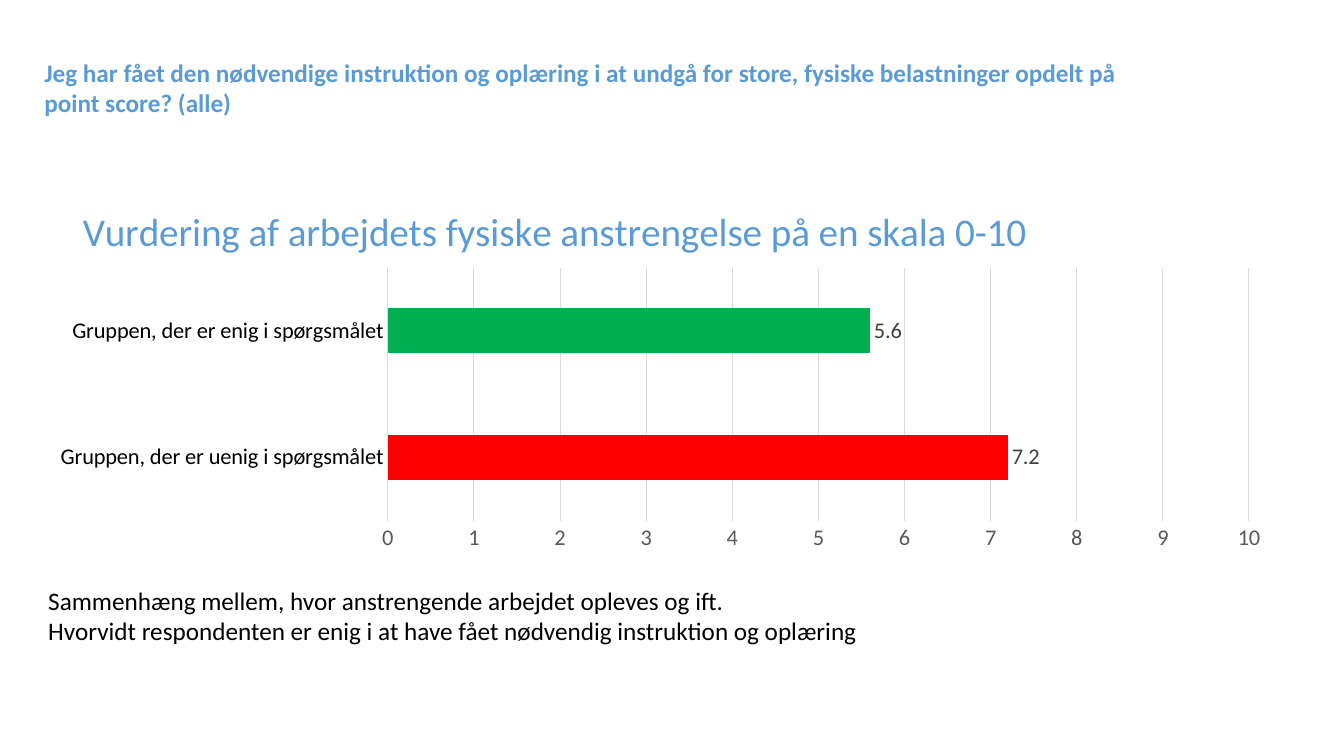
import pptx
import pptx.chart.data
import pptx.dml.color
import pptx.enum.chart
import pptx.enum.text
import pptx.oxml
import pptx.oxml.ns
import pptx.util

# Content
TITLE = ("Jeg har fået den nødvendige instruktion og oplæring i at undgå for store, "
         "fysiske belastninger opdelt på point score? (alle)")
CHART_TITLE = "Vurdering af arbejdets fysiske anstrengelse på en skala 0-10"
NOTES = ["Sammenhæng mellem, hvor anstrengende arbejdet opleves og ift.",
         "Hvorvidt respondenten er enig i at have fået nødvendig instruktion og oplæring"]

RGB = pptx.dml.color.RGBColor
BLUE, RED, GREEN = RGB(0x5B, 0x9B, 0xD5), RGB(0xFF, 0, 0), RGB(0, 0xB0, 0x50)
BLACK, AXIS_GREY = RGB(0, 0, 0), RGB(0x59, 0x59, 0x59)
LABEL_GREY, GRID_GREY = RGB(0x40, 0x40, 0x40), RGB(0xD9, 0xD9, 0xD9)
GROUPS = [("Gruppen, der er uenig i spørgsmålet", 7.2, RED),
          ("Gruppen, der er enig i spørgsmålet", 5.6, GREEN)]

# Places: left, top, width, height in inches; chart parts as shares of the chart
TITLE_BOX = (0.31, 0.41, 11.2, 0.91)
CHART_BOX = (0.38, 1.74, 12.38, 3.81)
NOTES_BOX = (0.38, 5.76, 8.32, 0.71)
CHART_TITLE_AT = {"x": 0.03, "y": 0.06}
PLOT_AT = {"x": 0.28, "y": 0.24, "w": 0.69, "h": 0.66}


def inches(box):
    return [pptx.util.Inches(v) for v in box]


def style(font, size, color, bold=False):
    values = {"name": "Calibri", "size": pptx.util.Pt(size), "bold": bold}
    for key, value in values.items():
        setattr(font, key, value)
    font.color.rgb = color


def draw_line(line):
    line.color.rgb = GRID_GREY
    line.width = pptx.util.Pt(0.75)


def manual_layout(shares, inner=False):
    target = '<c:layoutTarget val="inner"/>' if inner else ""
    modes = "".join(f'<c:{k}Mode val="edge"/>' for k in "xy")
    values = "".join(f'<c:{k} val="{v}"/>' for k, v in shares.items())
    return pptx.oxml.parse_xml(
        f'<c:layout {pptx.oxml.ns.nsdecls("c")}><c:manualLayout>'
        f"{target}{modes}{values}</c:manualLayout></c:layout>")


def replace_layout(parent, layout, index):
    for old in parent.findall(pptx.oxml.ns.qn("c:layout")):
        parent.remove(old)
    parent.insert(index, layout)


prs = pptx.Presentation()
prs.slide_width, prs.slide_height = inches((13.33, 7.5))
s = prs.slides.add_slide(prs.slide_layouts[5])

# Slide title
title = s.shapes.title
title.left, title.top, title.width, title.height = inches(TITLE_BOX)
tf = title.text_frame
tf.text = TITLE
tf.auto_size = pptx.enum.text.MSO_AUTO_SIZE.NONE
tf.vertical_anchor = pptx.enum.text.MSO_ANCHOR.MIDDLE
tf.margin_left = tf.margin_right = pptx.util.Inches(0.13)
tf.margin_top = tf.margin_bottom = pptx.util.Inches(0.07)
p = tf.paragraphs[0]
p.alignment = pptx.enum.text.PP_ALIGN.LEFT
style(p.runs[0].font, 18, BLUE, True)

# Bar chart
data = pptx.chart.data.CategoryChartData(number_format="General")
data.categories = [name for name, _, _ in GROUPS]
data.add_series("Series 1", [score for _, score, _ in GROUPS])
chart = s.shapes.add_chart(pptx.enum.chart.XL_CHART_TYPE.BAR_CLUSTERED,
                           *inches(CHART_BOX), data).chart
style(chart.font, 10, BLACK)
chart.has_legend = False
chart.chart_title.text_frame.text = CHART_TITLE
style(chart.chart_title.text_frame.paragraphs[0].runs[0].font, 28, BLUE)
title_xml = chart.chart_title.format.line and chart.chart_title._element
replace_layout(title_xml, manual_layout(CHART_TITLE_AT), 1)
plot_xml = chart.plots[0]._element.getparent()
replace_layout(plot_xml, manual_layout(PLOT_AT, inner=True), 0)

# Axes
for axis, color in ((chart.category_axis, BLACK), (chart.value_axis, AXIS_GREY)):
    axis.major_tick_mark = axis.minor_tick_mark = pptx.enum.chart.XL_TICK_MARK.NONE
    style(axis.tick_labels.font, 16, color)
draw_line(chart.category_axis.format.line)
scale = chart.value_axis
for key, value in {"minimum_scale": 0, "maximum_scale": 10, "major_unit": 1}.items():
    setattr(scale, key, value)
scale.format.line.fill.background()
draw_line(scale.major_gridlines.format.line)

# Bars and their values
plot = chart.plots[0]
plot.gap_width = 182
plot.vary_by_categories = False
bars = plot.series[0]
bars.format.fill.solid()
bars.format.fill.fore_color.rgb = BLUE
for i, (_, _, color) in enumerate(GROUPS):
    fill = bars.points[i].format.fill
    fill.solid()
    fill.fore_color.rgb = color
labels = bars.data_labels
labels.show_value = True
labels.position = pptx.enum.chart.XL_LABEL_POSITION.OUTSIDE_END
style(labels.font, 16, LABEL_GREY)

# Explanation below the chart
tf = s.shapes.add_textbox(*inches(NOTES_BOX)).text_frame
tf.word_wrap = False
tf.auto_size = pptx.enum.text.MSO_AUTO_SIZE.SHAPE_TO_FIT_TEXT
for i, text in enumerate(NOTES):
    p = tf.add_paragraph() if i else tf.paragraphs[0]
    r = p.add_run()
    r.text = text
    style(r.font, 18, BLACK)

prs.save("out.pptx")
